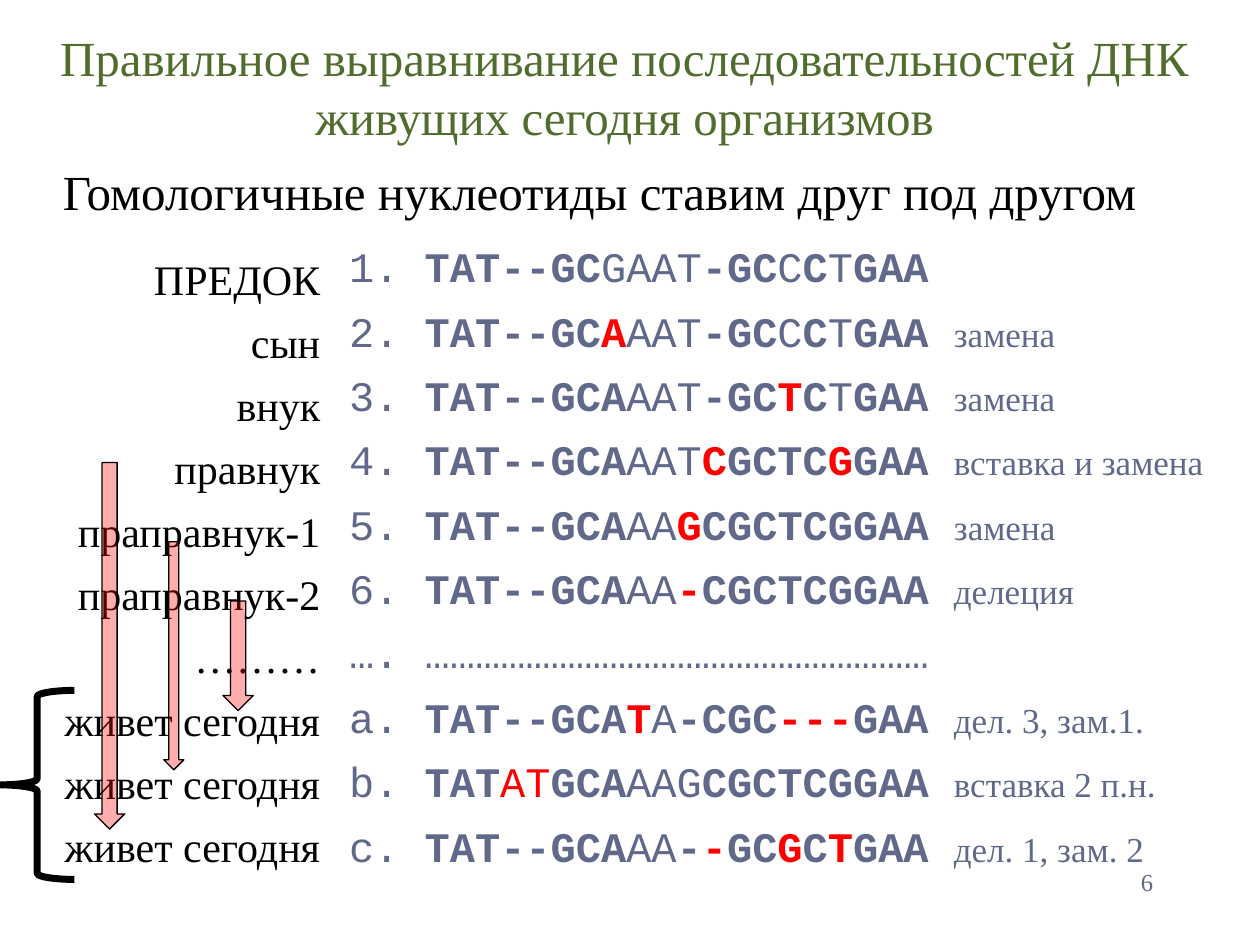
from typing import NamedTuple

from lxml.etree import SubElement
from pptx import Presentation
from pptx.dml.color import RGBColor
from pptx.enum.shapes import MSO_SHAPE as Shape
from pptx.enum.text import MSO_ANCHOR as Anchor, MSO_AUTO_SIZE as AutoSize, PP_ALIGN as Align
from pptx.oxml.ns import qn
from pptx.util import Inches, Pt

COLORS = {"title": "506D2D", "text": "000000", "sequence": "61698B", "change": "FF0000"}
SERIF, MONO = "Times New Roman", "Courier New"
COLUMNS, ROWS = 100, 75  # grid over the slide
SLIDE_WIDTH, SLIDE_HEIGHT = Inches(10), Inches(7.5)
HANGING_INDENT = Inches(0.5)


class Box(NamedTuple):
    column: float
    row: float
    columns: float
    rows: float

    def lengths(self) -> dict:
        return {
            "left": round(self.column * SLIDE_WIDTH / COLUMNS),
            "top": round(self.row * SLIDE_HEIGHT / ROWS),
            "width": round(self.columns * SLIDE_WIDTH / COLUMNS),
            "height": round(self.rows * SLIDE_HEIGHT / ROWS),
        }


class Sequence(NamedTuple):
    owner: str
    label: str
    pieces: str  # style letter, colon, letters; see STYLES
    note: str = ""


# Style letter -> (bold, colour name)
STYLES = {
    "n": (False, "sequence"),
    "b": (True, "sequence"),
    "r": (True, "change"),
    "p": (False, "change"),
}

SEQUENCES = [
    Sequence("ПРЕДОК", "1.", "b:TAT--GC n:GAAT b:-GC n:C b:C n:T b:GAA"),
    Sequence("сын", "2.", "b:TAT--GC r:A n:AAT b:-GC n:C b:C n:T b:GAA", "замена"),
    Sequence("внук", "3.", "b:TAT--GCA n:AAT b:-GC r:T b:C n:T b:GAA", "замена"),
    Sequence("правнук", "4.", "b:TAT--GCA n:AAT r:C b:GCTC r:G b:GAA", "вставка и замена"),
    Sequence("праправнук-1", "5.", "b:TAT--GCA n:AA r:G b:CGCTCGGAA", "замена"),
    Sequence("праправнук-2", "6.", "b:TAT--GCA n:AA r:- b:CGCTCGGAA", "делеция"),
    Sequence("………", "….", "n:" + "…" * 20),
    Sequence("живет сегодня", "a.", "b:TAT--GCA r:T n:A b:-CGC r:--- b:GAA", "дел. 3, зам.1."),
    Sequence("живет сегодня", "b.", "b:TAT p:AT b:GCA n:AAG b:CGCTCGGAA", "вставка 2 п.н."),
    Sequence("живет сегодня", "c.", "b:TAT--GCA n:AA b:- r:- b:GC r:G b:C r:T b:GAA",
             "дел. 1, зам. 2"),
]

ARROWS = [Box(7.5, 36.7, 2.4, 29.1), Box(17.7, 47.7, 2.4, 8.7), Box(13, 43, 1.6, 18.1)]


def set_values(target, values: dict) -> None:
    for name, value in values.items():
        setattr(target, name, value)


def add_run(paragraph, text: str, size: float, color: str, font: str = SERIF,
            bold: bool = False) -> None:
    run = paragraph.add_run()
    run.text = text
    set_values(run.font, {"name": font, "size": Pt(size), "bold": bold})
    run.font.color.rgb = RGBColor.from_string(COLORS[color])


def write_lines(shape, lines: list, size: float, color: str, **paragraph_format) -> None:
    frame = shape.text_frame
    for index, line in enumerate(lines):
        paragraph = frame.add_paragraph() if index else frame.paragraphs[0]
        set_values(paragraph, paragraph_format)
        add_run(paragraph, line, size, color)


def add_text(slide, box: Box, lines: list, size: float, color: str, **paragraph_format) -> None:
    shape = slide.shapes.add_textbox(**box.lengths())
    shape.text_frame.word_wrap = True
    write_lines(shape, lines, size, color, **paragraph_format)


def place(shape, box: Box, anchor: Anchor) -> None:
    set_values(shape, box.lengths())
    set_values(shape.text_frame, {
        "word_wrap": True, "auto_size": AutoSize.NONE, "vertical_anchor": anchor})


def write_sequence(paragraph, sequence: Sequence, first: bool) -> None:
    properties = paragraph._p.get_or_add_pPr()
    properties.set("marL", str(HANGING_INDENT))
    properties.set("indent", str(-HANGING_INDENT))
    SubElement(properties, qn("a:buNone"))
    paragraph.space_before = Pt(0 if first else 8)
    add_run(paragraph, sequence.label + " ", 24, "sequence", MONO)
    for piece in sequence.pieces.split():
        style, letters = piece.split(":")
        bold, color = STYLES[style]
        add_run(paragraph, letters, 24, color, MONO, bold)
    if sequence.note:
        add_run(paragraph, " ", 24, "sequence", MONO)
        add_run(paragraph, sequence.note, 20, "sequence")


def add_outline(slide, kind: Shape, box: Box, line_width: float):
    shape = slide.shapes.add_shape(kind, **box.lengths())
    shape.shadow.inherit = False
    shape.line.color.rgb = RGBColor.from_string(COLORS["text"])
    shape.line.width = Pt(line_width)
    return shape


def add_arrow(slide, box: Box) -> None:
    arrow = add_outline(slide, Shape.DOWN_ARROW, box, 0.75)
    arrow.fill.solid()
    arrow.fill.fore_color.rgb = RGBColor.from_string(COLORS["change"])
    color = arrow._element.spPr.find(qn("a:solidFill")).find(qn("a:srgbClr"))
    SubElement(color, qn("a:alpha"), val="32000")


def main() -> None:
    presentation = Presentation()
    set_values(presentation, {"slide_width": SLIDE_WIDTH, "slide_height": SLIDE_HEIGHT})
    slide = presentation.slides.add_slide(presentation.slide_layouts[1])
    title, body = slide.placeholders

    # Title
    place(title, Box(0, 1.4, 99.1, 10.9), Anchor.MIDDLE)
    write_lines(title, ["Правильное выравнивание последовательностей ДНК "
                        "живущих сегодня организмов"], 28, "title", alignment=Align.CENTER)

    # Aligned sequences
    place(body, Box(26.7, 18.6, 71.6, 51.4), Anchor.TOP)
    frame = body.text_frame
    for index, sequence in enumerate(SEQUENCES):
        paragraph = frame.add_paragraph() if index else frame.paragraphs[0]
        write_sequence(paragraph, sequence, first=index == 0)

    # Subtitle and the owners of the sequences
    add_text(slide, Box(4, 12.3, 93.7, 5.7),
             ["Гомологичные нуклеотиды ставим друг под другом"], 28, "text")
    add_text(slide, Box(4, 18.6, 22.4, 51), [sequence.owner for sequence in SEQUENCES],
             24, "text", alignment=Align.RIGHT, line_spacing=1.25)

    # Lines of descent, slide number and the brace around living organisms
    for box in ARROWS:
        add_arrow(slide, box)
    add_text(slide, Box(71.7, 68.3, 20.8, 5), ["6"], 14, "sequence", alignment=Align.RIGHT)
    brace = add_outline(slide, Shape.LEFT_BRACE, Box(0, 54.8, 5.9, 15), 4)
    brace.fill.background()

    presentation.save("out.pptx")


if __name__ == "__main__":
    main()
